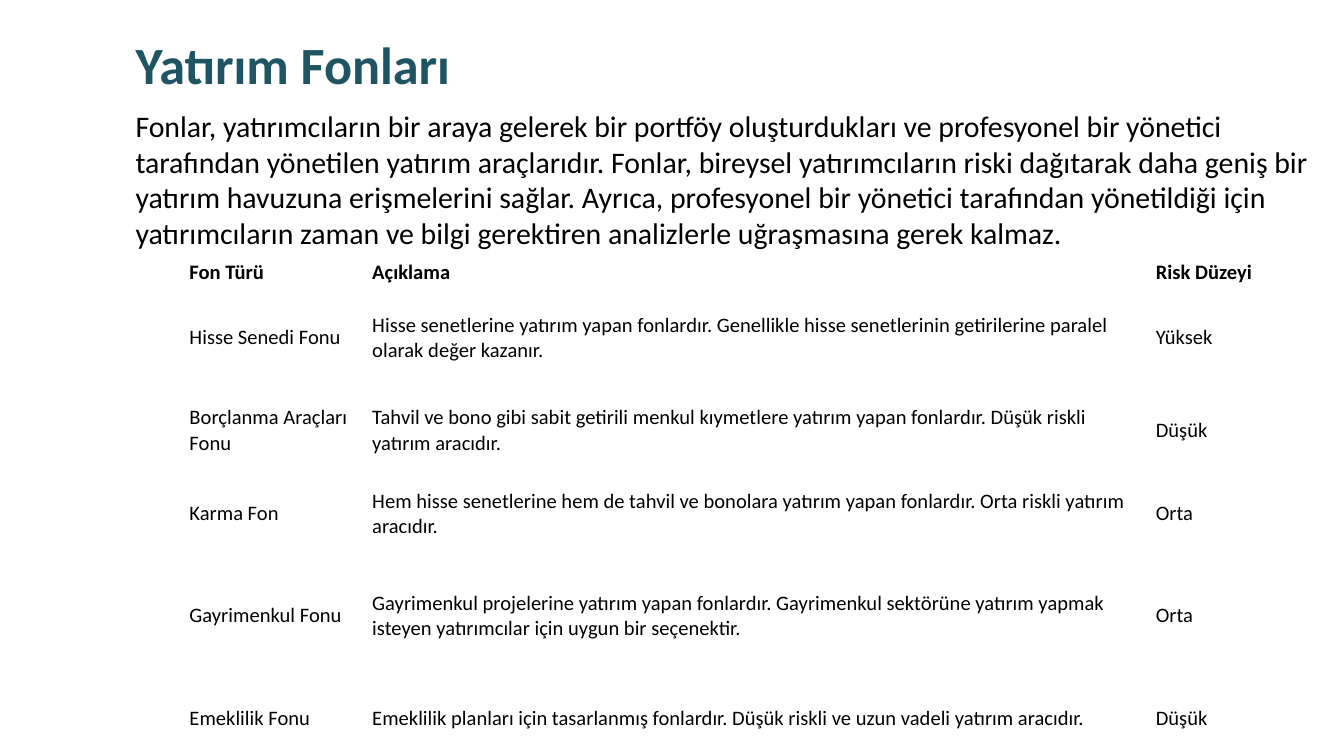
from pptx import Presentation
from pptx.dml.color import RGBColor
from pptx.enum.text import MSO_ANCHOR, PP_ALIGN
from pptx.util import Inches, Pt

TEAL = RGBColor(0x1F, 0x54, 0x63)
BLACK = RGBColor(0, 0, 0)

INTRO = (
    "Fonlar, yatırımcıların bir araya gelerek bir portföy oluşturdukları ve "
    "profesyonel bir yönetici tarafından yönetilen yatırım araçlarıdır. Fonlar, "
    "bireysel yatırımcıların riski dağıtarak daha geniş bir yatırım havuzuna "
    "erişmelerini sağlar. Ayrıca, profesyonel bir yönetici tarafından yönetildiği "
    "için yatırımcıların zaman ve bilgi gerektiren analizlerle uğraşmasına gerek kalmaz."
)

FUNDS = [
    ("Fon Türü", "Açıklama", "Risk Düzeyi"),
    ("Hisse Senedi Fonu",
     "Hisse senetlerine yatırım yapan fonlardır. Genellikle hisse senetlerinin "
     "getirilerine paralel olarak değer kazanır.", "Yüksek"),
    ("Borçlanma Araçları Fonu",
     "Tahvil ve bono gibi sabit getirili menkul kıymetlere yatırım yapan fonlardır. "
     "Düşük riskli yatırım aracıdır.", "Düşük"),
    ("Karma Fon",
     "Hem hisse senetlerine hem de tahvil ve bonolara yatırım yapan fonlardır. "
     "Orta riskli yatırım aracıdır.", "Orta"),
    ("Gayrimenkul Fonu",
     "Gayrimenkul projelerine yatırım yapan fonlardır. Gayrimenkul sektörüne yatırım "
     "yapmak isteyen yatırımcılar için uygun bir seçenektir.", "Orta"),
    ("Emeklilik Fonu",
     "Emeklilik planları için tasarlanmış fonlardır. Düşük riskli ve uzun vadeli "
     "yatırım aracıdır.", "Düşük"),
]
COL_WIDTHS = [1.36, 5.83, 1]
ROW_HEIGHTS = [0.19, 0.76, 0.62, 0.62, 0.9, 0.62]


def write_text(tf, text, size, color=BLACK, bold=False):
    tf.word_wrap = True
    p = tf.paragraphs[0]
    p.alignment = PP_ALIGN.LEFT
    r = p.add_run()
    r.text = text
    r.font.name = "Calibri"
    r.font.size = Pt(size)
    r.font.bold = bold
    r.font.color.rgb = color


def add_title(s, text, left, top, width, height):
    sp = s.shapes.title
    sp.left, sp.top = Inches(left), Inches(top)
    sp.width, sp.height = Inches(width), Inches(height)
    sp.text_frame.vertical_anchor = MSO_ANCHOR.TOP
    write_text(sp.text_frame, text, size=28, color=TEAL, bold=True)


def add_paragraph_box(s, text, left, top, width, height):
    sp = s.shapes.add_textbox(Inches(left), Inches(top), Inches(width), Inches(height))
    write_text(sp.text_frame, text, size=16)


def add_fund_table(s, left, top):
    frame = s.shapes.add_table(
        len(FUNDS), len(COL_WIDTHS), Inches(left), Inches(top),
        Inches(sum(COL_WIDTHS)), Inches(sum(ROW_HEIGHTS)))
    table = frame.table
    table.first_row = table.horz_banding = False
    for column, width in zip(table.columns, COL_WIDTHS):
        column.width = Inches(width)
    for i, (row, height) in enumerate(zip(table.rows, ROW_HEIGHTS)):
        row.height = Inches(height)
        for cell, text in zip(row.cells, FUNDS[i]):
            cell.fill.background()
            cell.vertical_anchor = MSO_ANCHOR.MIDDLE
            cell.margin_left = cell.margin_right = Inches(0.05)
            cell.margin_top = cell.margin_bottom = Inches(0.02)
            write_text(cell.text_frame, text, size=11, bold=i == 0)


def main():
    prs = Presentation()
    prs.slide_width = Inches(10)
    prs.slide_height = prs.slide_width * 9 // 16
    s = prs.slides.add_slide(prs.slide_layouts[5])
    add_title(s, "Yatırım Fonları", 0.91, 0.19, 5, 0.57)
    add_paragraph_box(s, INTRO, 0.91, 0.75, 9.09, 1.18)
    add_fund_table(s, 1.36, 1.91)
    prs.save("out.pptx")


if __name__ == "__main__":
    main()
